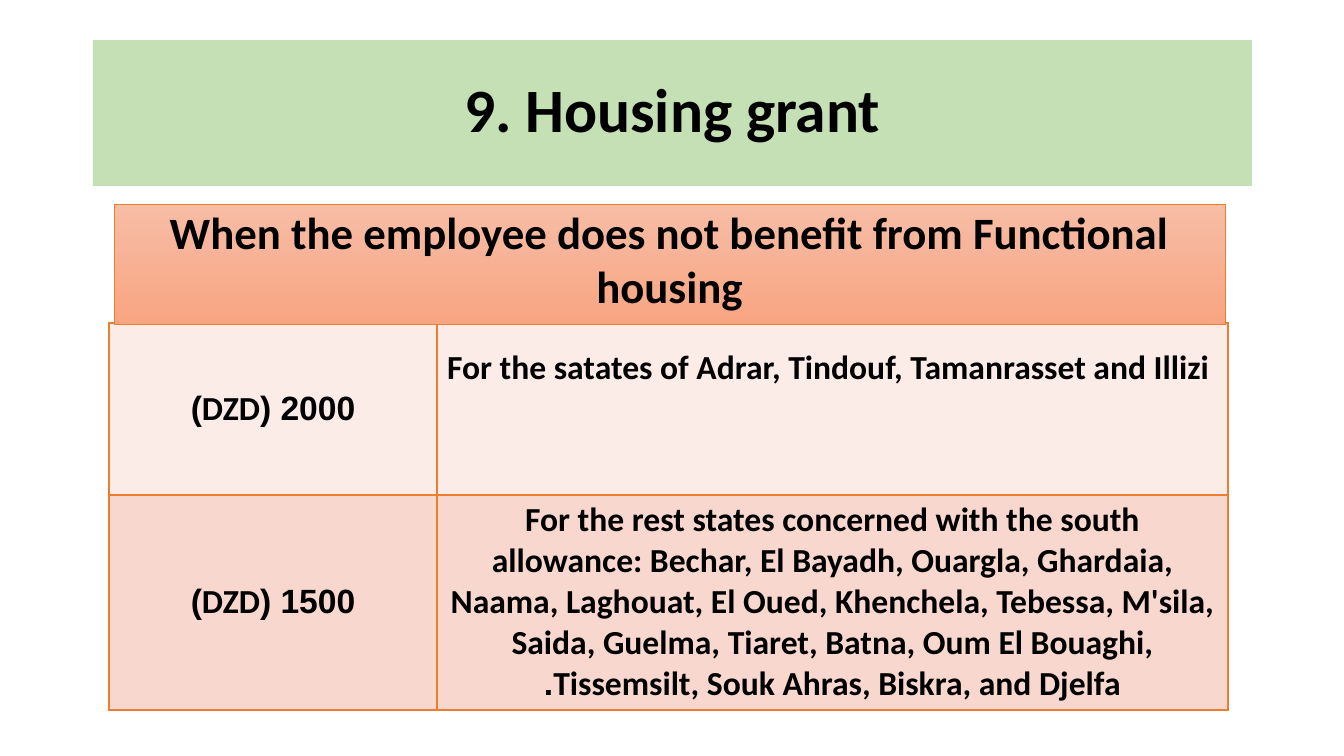
"""Build the housing grant slide: a title, a heading band and a table of amounts."""
from lxml import etree
from pptx import Presentation
from pptx.dml.color import RGBColor
from pptx.enum.shapes import MSO_SHAPE
from pptx.enum.text import MSO_ANCHOR, PP_ALIGN
from pptx.oxml.ns import qn
from pptx.util import Emu, Pt

RECT = MSO_SHAPE.RECTANGLE
TOP, MID = MSO_ANCHOR.TOP, MSO_ANCHOR.MIDDLE
LEFT, MID_X = PP_ALIGN.LEFT, PP_ALIGN.CENTER
BLACK = RGBColor(0, 0, 0)
GREEN = RGBColor(0xC5, 0xE0, 0xB4)
ORANGE = RGBColor(0xED, 0x7D, 0x31)
PEACH = RGBColor(0xF7, 0xBD, 0xA5)
CORAL = RGBColor(0xF8, 0xA5, 0x82)
PALE = RGBColor(0xFC, 0xEC, 0xE8)
PINK = RGBColor(0xF8, 0xD7, 0xCE)


def px(*nums):
    """Turn pixels into EMU."""
    return [Emu(round(num * 914400 / 100.8)) for num in nums]


def write(frame, text, size=24, align=MID_X, space=1.0, rtl=False):
    """Put one formatted paragraph into a text frame."""
    frame.word_wrap = True
    para = frame.paragraphs[0]
    para.alignment = align
    para.line_spacing = space
    run = para.add_run()
    run.text = text
    run.font.name = "Calibri"
    run.font.size = Pt(size)
    run.font.bold = True
    run.font.color.rgb = BLACK
    if rtl:
        para._p.get_or_add_pPr().set("rtl", "1")
        script = etree.SubElement(run._r.get_or_add_rPr(), qn("a:cs"))
        script.set("typeface", "Arial")


deck = Presentation()
deck.slide_width, deck.slide_height = px(1344, 756)
slide = deck.slides.add_slide(deck.slide_layouts[5])

title = slide.shapes.title
title.left, title.top, title.width, title.height = px(93, 40, 1159, 146)
title.fill.solid()
title.fill.fore_color.rgb = GREEN
title.text_frame.vertical_anchor = MID
write(title.text_frame, "9. Housing grant", size=44, space=0.9)

rows = [
    ("2000 (DZD)", "For the satates of Adrar, Tindouf, Tamanrasset and Illizi", PALE),
    ("1500 (DZD)", "For the rest states concerned with the south allowance: "
     "Bechar, El Bayadh, Ouargla, Ghardaia, Naama, Laghouat, El Oued, Khenchela, "
     "Tebessa, M'sila, Saida, Guelma, Tiaret, Batna, Oum El Bouaghi, Tissemsilt, "
     "Souk Ahras, Biskra, and Djelfa.", PINK),
]
table = slide.shapes.add_table(2, 2, *px(109, 323, 1119, 387)).table
table.first_row = table.horz_banding = False
table.columns[0].width, table.columns[1].width = px(328, 791)
table.rows[0].height, table.rows[1].height = px(172, 215)
for row, (sum_text, states, shade) in enumerate(rows):
    for col, text in enumerate((sum_text, states)):
        cell = table.cell(row, col)
        cell.vertical_anchor = MID
        for side in ("lnL", "lnR", "lnT", "lnB"):
            edge = etree.SubElement(cell._tc.get_or_add_tcPr(), qn("a:" + side), w=str(Pt(1)))
            paint = etree.SubElement(edge, qn("a:solidFill"))
            etree.SubElement(paint, qn("a:srgbClr"), val=str(ORANGE))
        cell.fill.solid()
        cell.fill.fore_color.rgb = shade
        first = row == 0 and col == 1
        write(cell.text_frame, text, align=LEFT if first else MID_X, rtl=not first)
south = table.cell(0, 1)
south.vertical_anchor = TOP
south.margin_top = px(25)[0]

band = slide.shapes.add_shape(RECT, *px(114, 204, 1111, 120))
band.shadow.inherit = False
band.fill.gradient()
band.fill.gradient_angle = 270
for stop, shade in zip(band.fill.gradient_stops, (PEACH, CORAL)):
    stop.color.rgb = shade
band.line.color.rgb = ORANGE
band.line.width = Pt(0.5)
band.text_frame.vertical_anchor = TOP
band.text_frame.margin_top = px(1)[0]
write(band.text_frame, "When the employee does not benefit from Functional housing", size=32)

deck.save("out.pptx")
